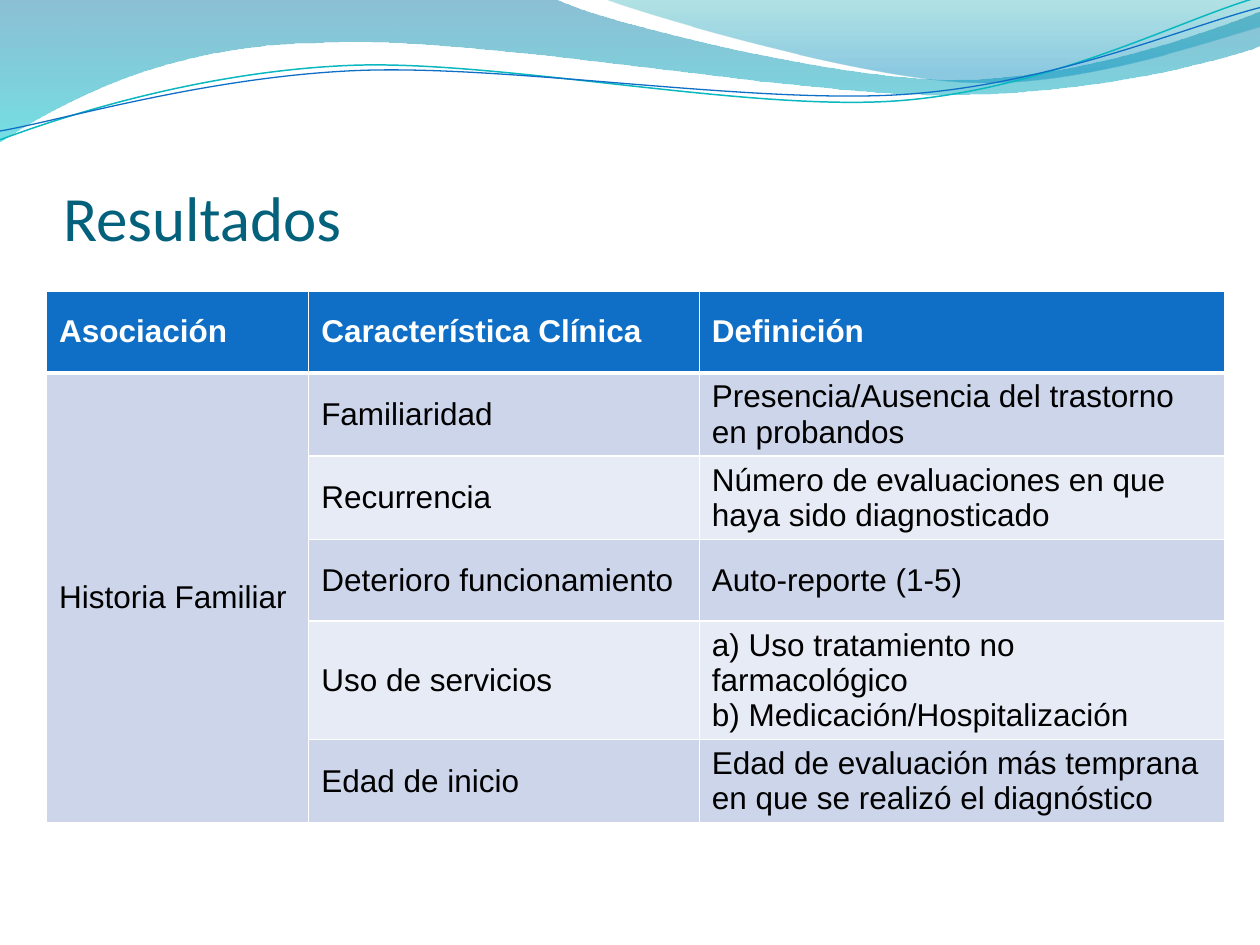
import math

from lxml import etree
from pptx import Presentation
from pptx.dml.color import RGBColor
from pptx.enum import text
from pptx.oxml import ns
from pptx.util import Inches, Pt

TITLE = "Resultados"
HEADERS = ["Asociación", "Característica Clínica", "Definición"]
ASSOCIATION = "Historia Familiar"
FEATURES = [
    ("Familiaridad", "Presencia/Ausencia del trastorno en probandos"),
    ("Recurrencia", "Número de evaluaciones en que haya sido diagnosticado"),
    ("Deterioro funcionamiento", "Auto-reporte (1-5)"),
    ("Uso de servicios",
     "a) Uso tratamiento no farmacológico\nb) Medicación/Hospitalización"),
    ("Edad de inicio",
     "Edad de evaluación más temprana en que se realizó el diagnóstico"),
]
COLUMN_WIDTHS = [2.08, 3.1, 4.17]
ROW_HEIGHT = 0.65
HEADER_FILL, BAND_FILLS = "0F6FC6", ["CCD5EA", "E7EBF5"]

# Outlines in slide inches: a start point, then lines (x, y) or curves (two controls, end)
WAVES = [
    {"box": (-0.01, -0.01, 10.02, 1.14),
     "outline": [(0, -0.01), (4.4, -0.01), (4.76, 0.17, 6.64, 0.63, 7.58, 0.63),
                 (8.53, 0.63, 9.58, 0.26, 10, 0.09), (10.01, 0.36),
                 (9.83, 0.44, 8.7, 0.76, 7.46, 0.75),
                 (6.22, 0.75, 3.82, 0.28, 2.57, 0.34),
                 (1.29, 0.35, 0.46, 0.83, -0.01, 1.13), (0, -0.01)],
     "stops": [(0, "0074A1", 45), (1, "00C6CF", 55)]},
    {"box": (4.79, -0.01, 5.21, 0.7),
     "outline": [(4.79, -0.01), (5.09, 0.11, 6.82, 0.62, 7.69, 0.65),
                 (8.56, 0.69, 9.61, 0.32, 10, 0.21), (10, 0), (4.79, -0.01)],
     "stops": [(0, "00A1A9", 30), (0.8, "008BBF", 45)]},
    {"box": (-0.02, 0.22, 10.02, 0.71), "rotation": -2.7,
     "outline": [(0, 1.11), (0.48, 0.93, 1.58, 0.57, 2.77, 0.52),
                 (3.95, 0.47, 5.93, 0.89, 7.13, 0.8),
                 (8.33, 0.71, 9.38, 0.15, 9.98, -0.02)],
     "line": ("0AB8BF", 0.85)},
    {"box": (-0.02, 0.3, 10.03, 0.58), "rotation": -2.7,
     "outline": [(0, 1.04), (0.47, 0.96, 1.64, 0.61, 2.83, 0.56),
                 (4.03, 0.51, 5.97, 0.83, 7.17, 0.75),
                 (8.36, 0.67, 9.41, 0.21, 10, 0.06)],
     "line": ("0F6FC6", 0.75)},
]


def color(hex_code):
    return RGBColor.from_string(hex_code)


def to_local(x, y, box, rotation):
    """Give a slide point relative to the corner of the unrotated box, in EMU."""
    left, top, width, height = box
    angle = math.radians(-rotation)
    dx, dy = x - left - width / 2, y - top - height / 2
    return (Inches(width / 2 + dx * math.cos(angle) - dy * math.sin(angle)),
            Inches(height / 2 + dx * math.sin(angle) + dy * math.cos(angle)))


def add_curves(shape, outline, box, rotation):
    """Write the outline of the freeform with true Bézier segments."""
    path = next(shape.element.iter(ns.qn("a:path")))
    path.set("w", str(Inches(box[2])))
    path.set("h", str(Inches(box[3])))
    commands = [node for node in path if node.tag != ns.qn("a:close")]
    for command, segment in zip(commands, outline):
        for point in list(command):
            command.remove(point)
        if len(segment) == 6:
            curve = etree.Element(ns.qn("a:cubicBezTo"))
            path.replace(command, curve)
            command = curve
        for point in zip(segment[::2], segment[1::2]):
            x, y = to_local(*point, box, rotation)
            etree.SubElement(command, ns.qn("a:pt"), x=str(x), y=str(y))


def add_wave(slide, box, outline, rotation=0, stops=None, line=None):
    ends = [(Inches(segment[-2]), Inches(segment[-1])) for segment in outline]
    builder = slide.shapes.build_freeform(*ends[0])
    builder.add_line_segments(ends[1:], close=stops is not None)
    shape = builder.convert_to_shape()
    add_curves(shape, outline, box, rotation)
    shape.left, shape.top, shape.width, shape.height = map(Inches, box)
    shape.rotation = rotation
    shape.shadow.inherit = False
    if line:
        shape.fill.background()
        shape.line.color.rgb = color(line[0])
        shape.line.width = Pt(line[1])
        return
    shape.line.fill.background()
    shape.fill.gradient()
    shape.fill.gradient_angle = 270
    for stop, (position, hex_code, _) in zip(shape.fill.gradient_stops, stops):
        stop.position = position
        stop.color.rgb = color(hex_code)
    for node, (_, _, opacity) in zip(shape.element.spPr.iter(ns.qn("a:srgbClr")), stops):
        etree.SubElement(node, ns.qn("a:alpha"), val=str(opacity * 1000))


def set_borders(cell, top=1, bottom=1):
    properties = cell._tc.get_or_add_tcPr()
    widths = [("a:lnL", 1), ("a:lnR", 1), ("a:lnT", top), ("a:lnB", bottom)]
    for index, (tag, width) in enumerate(widths):
        border = etree.Element(ns.qn(tag), w=str(Pt(width)))
        fill = etree.SubElement(border, ns.qn("a:solidFill"))
        etree.SubElement(fill, ns.qn("a:srgbClr"), val="FFFFFF")
        properties.insert(index, border)


def format_runs(text_frame, size, font, hex_code, bold=False):
    for paragraph in text_frame.paragraphs:
        for run in paragraph.runs:
            run.font.size, run.font.name, run.font.bold = Pt(size), font, bold
            run.font.color.rgb = color(hex_code)


def add_title(slide):
    title = slide.shapes.title
    title.left, title.top, title.width, title.height = map(Inches, (0.5, 0.77, 9, 1.25))
    frame = title.text_frame
    frame.text = TITLE
    frame.vertical_anchor = text.MSO_ANCHOR.BOTTOM
    frame.margin_left = frame.margin_right = frame.margin_bottom = 0
    frame.margin_top = Inches(0.05)
    frame.paragraphs[0].alignment = text.PP_ALIGN.LEFT
    format_runs(frame, 36, "Calibri", "04617B")
    # Bring the title in front of the waves
    title.element.getparent().append(title.element)


def add_results(slide):
    rows = [HEADERS] + [("", *feature) for feature in FEATURES]
    graphic_frame = slide.shapes.add_table(
        len(rows), len(HEADERS), Inches(0.37), Inches(2.31),
        Inches(sum(COLUMN_WIDTHS)), Inches(ROW_HEIGHT * len(rows)))
    graphic_frame.height = Inches(4.11)
    table = graphic_frame.table
    for column, width in zip(table.columns, COLUMN_WIDTHS):
        column.width = Inches(width)
    table.cell(1, 0).merge(table.cell(len(FEATURES), 0))
    for r, row in enumerate(rows):
        header = r == 0
        for c, content in enumerate(row):
            cell = table.cell(r, c)
            cell.text = ASSOCIATION if (r, c) == (1, 0) else content
            cell.vertical_anchor = text.MSO_ANCHOR.MIDDLE
            cell.fill.solid()
            band = 0 if c == 0 else (r - 1) % 2
            cell.fill.fore_color.rgb = color(HEADER_FILL if header else BAND_FILLS[band])
            set_borders(cell, top=3 if r == 1 else 1, bottom=3 if header else 1)
            format_runs(cell.text_frame, 18, "Arial",
                        "FFFFFF" if header else "000000", bold=header)


def main():
    presentation = Presentation()
    presentation.slide_width, presentation.slide_height = Inches(10), Inches(7.5)
    slide = presentation.slides.add_slide(presentation.slide_layouts[5])
    # Wave decoration, then title and table
    for wave in WAVES:
        add_wave(slide, **wave)
    add_title(slide)
    add_results(slide)
    presentation.save("out.pptx")


if __name__ == "__main__":
    main()
